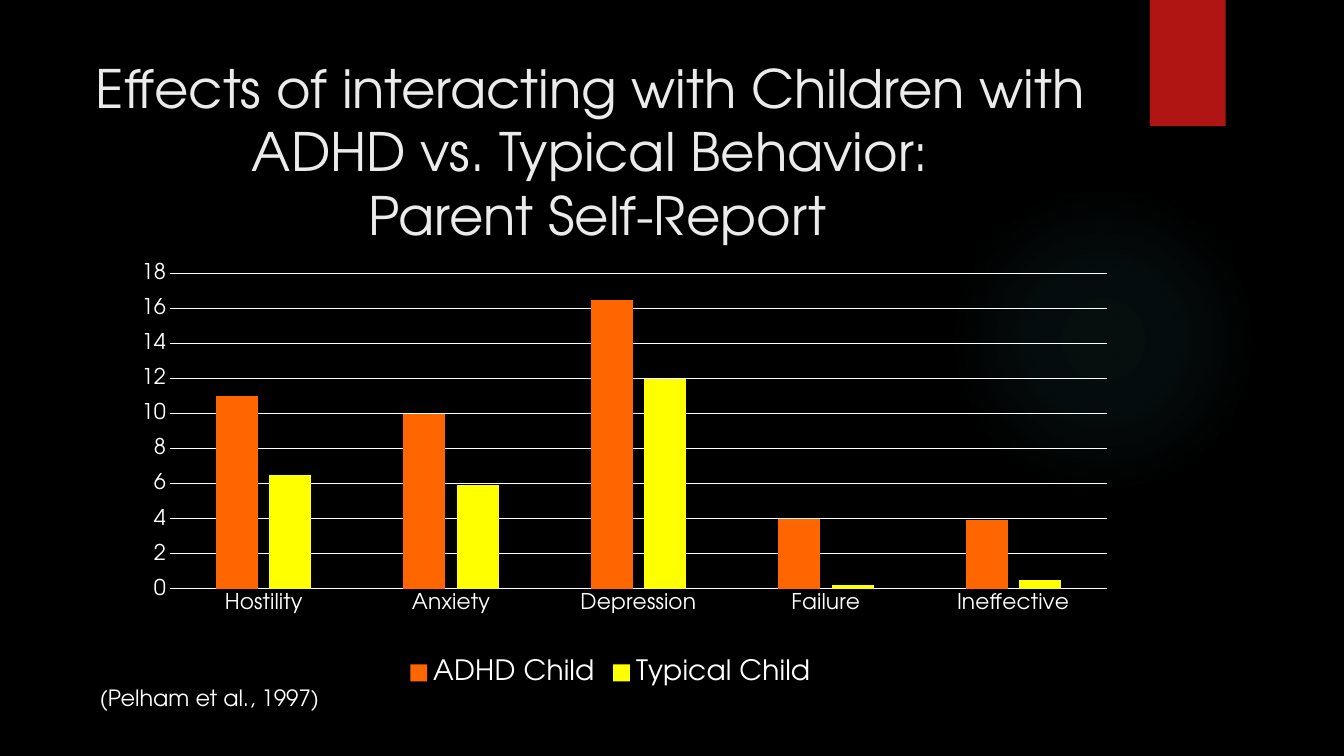
"""Build the slide comparing parent self-reports for ADHD and typical child behavior."""
from dataclasses import dataclass

from lxml import etree
from pptx import Presentation
from pptx.chart.data import CategoryChartData
from pptx.dml.color import RGBColor
from pptx.enum import chart as charts, shapes, text
from pptx.oxml import ns
from pptx.util import Cm, Pt

FONT = "TeX Gyre Adventor"
COLORS = {
    "background": "000000",
    "glow": "50B9C1",
    "ribbon": "B01513",
    "title": "EBEBEB",
    "text": "FFFFFF",
    "adhd": "FF6600",
    "typical": "FFFF00",
}
CATEGORIES = ("Hostility", "Anxiety", "Depression", "Failure", "Ineffective")


@dataclass(frozen=True)
class Box:
    """Position and size in centimetres."""
    left: float
    top: float
    width: float
    height: float

    def lengths(self) -> tuple:
        """Return the four values as lengths."""
        return Cm(self.left), Cm(self.top), Cm(self.width), Cm(self.height)


@dataclass(frozen=True)
class Decoration:
    """A background shape."""
    kind: shapes.MSO_SHAPE
    box: Box
    color: str


@dataclass(frozen=True)
class ReportSeries:
    """One group of bars."""
    name: str
    values: tuple
    color: str


GLOW = Decoration(shapes.MSO_SHAPE.OVAL, Box(23.9, 4.65, 7.82, 7.82), "glow")
RIBBON = Decoration(shapes.MSO_SHAPE.RECTANGLE, Box(28.98, 0, 1.91, 3.18), "ribbon")
SERIES = (
    ReportSeries("ADHD Child", (11, 10, 16.5, 4, 3.9), "adhd"),
    ReportSeries("Typical Child ", (6.5, 5.9, 12, 0.2, 0.5), "typical"),
)


def rgb(name: str) -> RGBColor:
    """Look up a named color."""
    return RGBColor.from_string(COLORS[name])


def style_font(font, size: float, color: str = "text") -> None:
    """Set typeface, size and color."""
    font.name = FONT
    font.size = Pt(size)
    font.bold = False
    font.color.rgb = rgb(color)


def add_decoration(slide, decoration: Decoration):
    """Draw a filled shape without outline."""
    shape = slide.shapes.add_shape(decoration.kind, *decoration.box.lengths())
    shape.shadow.inherit = False
    shape.fill.solid()
    shape.fill.fore_color.rgb = rgb(decoration.color)
    shape.line.fill.background()
    return shape


def soften(shape, color: str) -> None:
    """Replace the solid fill with a fading radial gradient."""
    stops = "".join(
        f'<a:gs pos="{position * 1000}"><a:srgbClr val="{COLORS[color]}">'
        f'<a:alpha val="{alpha * 1000}"/></a:srgbClr></a:gs>'
        for position, alpha in ((0, 7), (36, 6), (69, 0), (100, 0))
    )
    gradient = etree.fromstring(
        f'<a:gradFill {ns.nsdecls("a")} rotWithShape="1"><a:gsLst>{stops}</a:gsLst>'
        '<a:path path="circle"><a:fillToRect l="50000" t="50000" r="50000" b="50000"/>'
        "</a:path></a:gradFill>"
    )
    properties = shape._element.spPr
    properties.replace(properties.find(ns.qn("a:solidFill")), gradient)


def format_title(title) -> None:
    """Place and write the title."""
    title.left, title.top, title.width, title.height = Box(1.8, 1.27, 26.14, 3.89).lengths()
    frame = title.text_frame
    frame.auto_size = text.MSO_AUTO_SIZE.NONE
    frame.vertical_anchor = text.MSO_ANCHOR.TOP
    paragraph = frame.paragraphs[0]
    paragraph.alignment = text.PP_ALIGN.CENTER
    first = paragraph.add_run()
    first.text = "Effects of interacting with Children with ADHD vs. Typical Behavior:"
    paragraph.add_line_break()
    second = paragraph.add_run()
    second.text = " Parent Self-Report"
    for run in (first, second):
        style_font(run.font, 37.8, "title")


def set_plot_layout(chart, box: tuple) -> None:
    """Fix the inner plot area as fractions of the chart."""
    plot_area = chart._chartSpace.chart.plotArea
    for previous in plot_area.findall(ns.qn("c:layout")):
        plot_area.remove(previous)
    values = "".join(f'<c:{key} val="{value}"/>' for key, value in zip("xywh", box))
    plot_area.insert(0, etree.fromstring(
        f'<c:layout {ns.nsdecls("c")}><c:manualLayout><c:layoutTarget val="inner"/>'
        f'<c:xMode val="edge"/><c:yMode val="edge"/>{values}</c:manualLayout></c:layout>'
    ))


def add_report_chart(slide) -> None:
    """Draw the clustered columns."""
    data = CategoryChartData()
    data.categories = CATEGORIES
    for series in SERIES:
        data.add_series(series.name, series.values)
    chart = slide.shapes.add_chart(
        charts.XL_CHART_TYPE.COLUMN_CLUSTERED, *Box(3.07, 5.77, 24.84, 11.66).lengths(), data
    ).chart
    chart.has_title = False
    style_font(chart.font, 15.5)
    set_plot_layout(chart, (0.049, 0.096, 0.951, 0.682))

    plot = chart.plots[0]
    plot.gap_width, plot.overlap, plot.vary_by_categories = 219, -27, False
    for bars, series in zip(plot.series, SERIES):
        bars.format.fill.solid()
        bars.format.fill.fore_color.rgb = rgb(series.color)
        bars.invert_if_negative = False

    category_axis, value_axis = chart.category_axis, chart.value_axis
    for axis in (category_axis, value_axis):
        axis.major_tick_mark = axis.minor_tick_mark = charts.XL_TICK_MARK.NONE
        style_font(axis.tick_labels.font, 15.5)
    value_axis.minimum_scale, value_axis.maximum_scale, value_axis.major_unit = 0, 18, 2
    value_axis.format.line.fill.background()
    for line in (category_axis.format.line, value_axis.major_gridlines.format.line):
        line.color.rgb = rgb("text")
        line.width = Pt(0.75)

    chart.has_legend = True
    chart.legend.position = charts.XL_LEGEND_POSITION.BOTTOM
    chart.legend.include_in_layout = False
    style_font(chart.legend.font, 20)


def add_citation(slide) -> None:
    """Write the source line below the chart."""
    frame = slide.shapes.add_textbox(*Box(2.26, 17.12, 6.12, 0.94).lengths()).text_frame
    frame.word_wrap = False
    frame.auto_size = text.MSO_AUTO_SIZE.SHAPE_TO_FIT_TEXT
    run = frame.paragraphs[0].add_run()
    run.text = "(Pelham et al., 1997)"
    style_font(run.font, 16)


def main() -> None:
    """Assemble and save the presentation."""
    presentation = Presentation()
    presentation.slide_width, presentation.slide_height = Cm(33.87), Cm(19.05)
    slide = presentation.slides.add_slide(presentation.slide_layouts.get_by_name("Title Only"))
    slide.background.fill.solid()
    slide.background.fill.fore_color.rgb = rgb("background")
    soften(add_decoration(slide, GLOW), GLOW.color)
    add_decoration(slide, RIBBON)
    format_title(slide.shapes.title)
    add_report_chart(slide)
    add_citation(slide)
    presentation.save("out.pptx")


if __name__ == "__main__":
    main()
